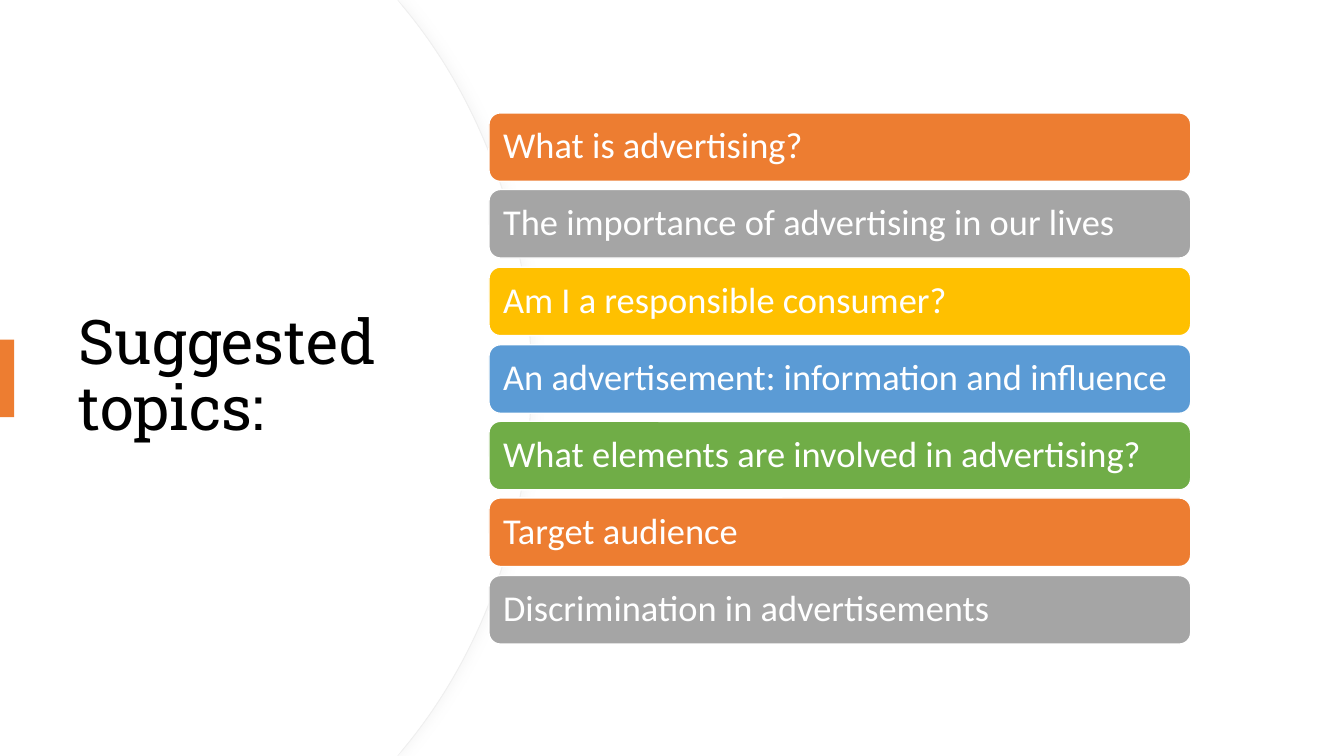
from dataclasses import dataclass

from lxml import etree
from pptx import Presentation
from pptx import util as u
from pptx.dml.color import RGBColor
from pptx.enum import shapes, text
from pptx.oxml import ns

PX = 9144
SLIDE_W, SLIDE_H = 1333, 750
COLORS = {
    "white": "FFFFFF",
    "black": "000000",
    "edge": "EFEFEF",
    "shadow": "D9D9D9",
    "orange": "ED7D31",
    "gray": "A5A5A5",
    "gold": "FFC000",
    "blue": "5B9BD5",
    "green": "70AD47",
}


@dataclass
class Box:
    x: int
    y: int
    w: int
    h: int

    def emu(self) -> list[int]:
        return [v * PX for v in (self.x, self.y, self.w, self.h)]


@dataclass
class Topic:
    label: str
    color: str


TOPICS = [
    Topic("What is advertising?", "orange"),
    Topic("The importance of advertising in our lives", "gray"),
    Topic("Am I a responsible consumer?", "gold"),
    Topic("An advertisement: information and influence", "blue"),
    Topic("What elements are involved in advertising?", "green"),
    Topic("Target audience", "orange"),
    Topic("Discrimination in advertisements", "gray"),
]
FIRST_ROW = Box(485, 112, 696, 68)
ROWS_SPAN = 459


def rgb(name: str) -> RGBColor:
    return RGBColor.from_string(COLORS[name])


def paint(sp, fill: str, line: str | None = None, width: float = 1) -> None:
    sp.shadow.inherit = False
    sp.fill.solid()
    sp.fill.fore_color.rgb = rgb(fill)
    if line:
        sp.line.color.rgb = rgb(line)
        sp.line.width = u.Pt(width)
    else:
        sp.line.fill.background()


def format_text(tf, font: str, size: int, color: str) -> None:
    tf.word_wrap = True
    tf.auto_size = text.MSO_AUTO_SIZE.NONE
    tf.vertical_anchor = text.MSO_ANCHOR.MIDDLE
    p = tf.paragraphs[0]
    p.alignment = text.PP_ALIGN.LEFT
    p.line_spacing = 0.9
    r = p.runs[0]
    r.font.name = font
    r.font.size = u.Pt(size)
    r.font.color.rgb = rgb(color)


def add_panel(s, right: int):
    builder = s.shapes.build_freeform(0, 0, scale=PX)
    builder.add_line_segments([(right, 0), (right, SLIDE_H), (0, SLIDE_H)], close=True)
    sp = builder.convert_to_shape()
    outline = sp.element.spPr.find(".//" + ns.qn("a:path"))
    outline.set("w", str(right))
    outline.set("h", str(SLIDE_H))
    for child in list(outline):
        outline.remove(child)
    shoulder, bulge = right - 126, right - 48
    commands = [
        ("moveTo", [(0, 0)]),
        ("lnTo", [(394, 0)]),
        ("lnTo", [(shoulder, 8)]),
        ("cubicBezTo", [(bulge, 102), (right, 232), (right, 375)]),
        ("cubicBezTo", [(right, 518), (bulge, 648), (shoulder, 742)]),
        ("lnTo", [(394, SLIDE_H)]),
        ("lnTo", [(0, SLIDE_H)]),
        ("close", []),
    ]
    for name, points in commands:
        command = etree.SubElement(outline, ns.qn(f"a:{name}"))
        for x, y in points:
            etree.SubElement(command, ns.qn("a:pt"), x=str(x), y=str(y))
    return sp


def add_shadow(sp, color: str) -> None:
    effects = sp.element.spPr.find(ns.qn("a:effectLst"))
    shadow = etree.SubElement(
        effects,
        ns.qn("a:outerShdw"),
        blurRad=str(u.Pt(7)),
        dist=str(u.Pt(3)),
        dir="0",
        algn="l",
        rotWithShape="0",
    )
    clr = etree.SubElement(shadow, ns.qn("a:srgbClr"), val=COLORS[color])
    etree.SubElement(clr, ns.qn("a:alpha"), val="20000")


def add_title(s, box: Box, label: str) -> None:
    title = s.shapes.title
    title.element.getparent().append(title.element)
    title.left, title.top, title.width, title.height = box.emu()
    title.text_frame.text = label
    format_text(title.text_frame, "Roboto Slab", 44, "black")


def add_topic(group, box: Box, topic: Topic) -> None:
    sp = group.shapes.add_shape(shapes.MSO_SHAPE.ROUNDED_RECTANGLE, *box.emu())
    paint(sp, topic.color, "white")
    label_box = Box(box.x + 3, box.y + 3, box.w - 7, box.h - 6)
    tf = group.shapes.add_textbox(*label_box.emu()).text_frame
    tf.text = topic.label
    tf.margin_left = tf.margin_right = tf.margin_top = tf.margin_bottom = 11 * PX
    format_text(tf, "Calibri", 26, "white")


def main() -> None:
    prs = Presentation()
    prs.slide_width, prs.slide_height = SLIDE_W * PX, SLIDE_H * PX
    s = prs.slides.add_slide(prs.slide_layouts[5])

    back_panel = add_panel(s, 527)
    paint(back_panel, "white", "edge", 0.75)
    add_shadow(back_panel, "shadow")
    paint(add_panel(s, 526), "white")

    add_title(s, Box(68, 127, 378, 495), "Suggested topics:")
    accent = s.shapes.add_shape(shapes.MSO_SHAPE.RECTANGLE, *Box(0, 337, 14, 77).emu())
    paint(accent, "orange")

    group = s.shapes.add_group_shape()
    for i, topic in enumerate(TOPICS):
        y = FIRST_ROW.y + round(i * ROWS_SPAN / (len(TOPICS) - 1))
        add_topic(group, Box(FIRST_ROW.x, y, FIRST_ROW.w, FIRST_ROW.h), topic)

    prs.save("out.pptx")


if __name__ == "__main__":
    main()
